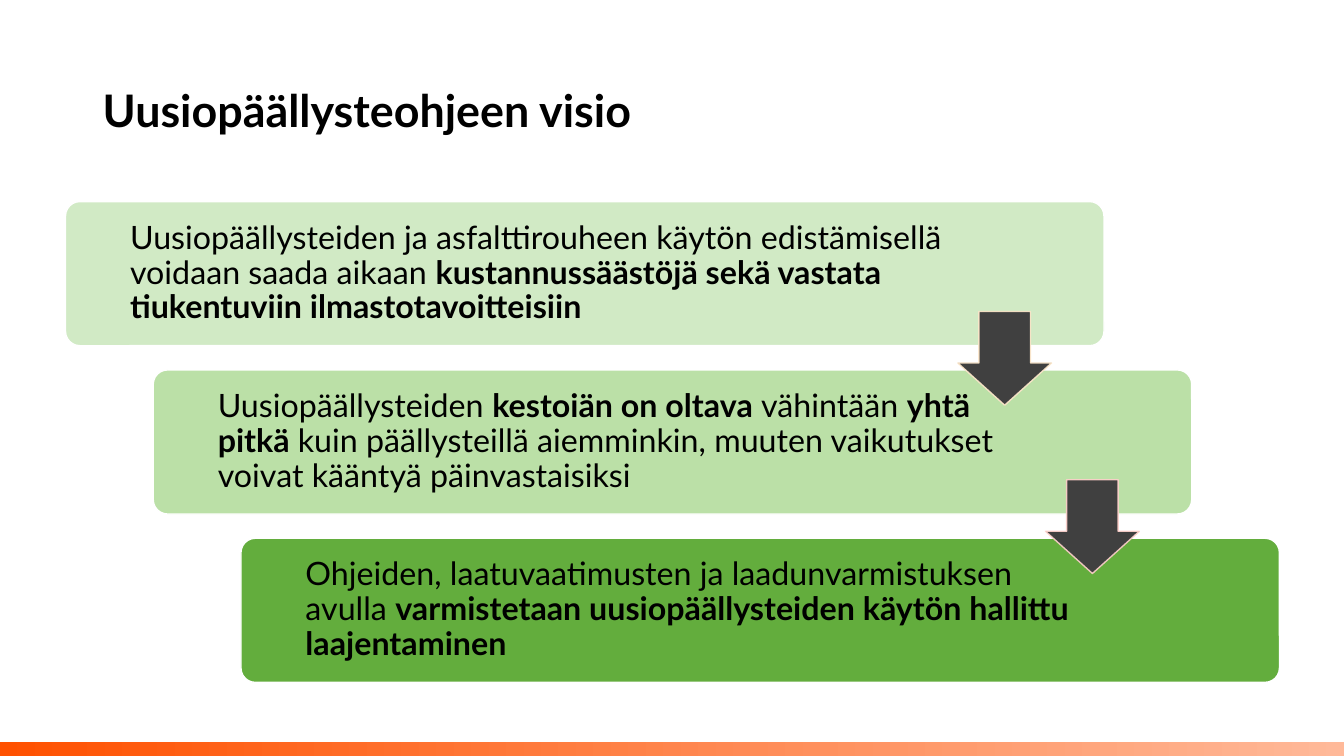
"""Build the slide on the vision of the recycled pavement guideline."""
from dataclasses import dataclass

import pptx
import pptx.dml.color
import pptx.enum.shapes
import pptx.enum.text
import pptx.oxml
import pptx.oxml.ns
import pptx.util

SHAPE = pptx.enum.shapes.MSO_SHAPE


@dataclass(frozen=True)
class Theme:
    font: str = "Lato"
    title_size: int = 32
    body_size: int = 23
    text: str = "000000"
    outline: str = "FFFFFF"
    arrow: str = "404040"
    bar: tuple[str, str] = ("FF5100", "FFB999")


@dataclass(frozen=True)
class Box:
    x: int
    y: int
    w: int
    h: int

    def shifted(self, n: int) -> "Box":
        return Box(self.x + n * STEP_X, self.y + n * STEP_Y, self.w, self.h)


@dataclass(frozen=True)
class Run:
    text: str
    bold: bool = False


@dataclass(frozen=True)
class Step:
    fill: str
    right_inset: int
    runs: tuple[Run, ...]


THEME = Theme()
STEP_X, STEP_Y = 87, 167
SLIDE = Box(0, 0, 1333, 750)
BAR = Box(0, 736, 1333, 14)
TITLE = Box(92, 40, 1077, 145)
FIRST_STEP = Box(65, 200, 1030, 143)
FIRST_ARROW = Box(950, 309, 93, 93)
INSET, INDENT = 10, 50

STEPS = (
    Step("D1EAC5", 155, (
        Run("Uusiopäällysteiden ja asfalttirouheen käytön edistämisellä voidaan saada aikaan "),
        Run("kustannussäästöjä sekä vastata tiukentuviin ilmastotavoitteisiin", True),
    )),
    Step("BBE0A7", 189, (
        Run("Uusiopäällysteiden "),
        Run("kestoiän on oltava ", True),
        Run("vähintään "),
        Run("yhtä pitkä ", True),
        Run("kuin päällysteillä aiemminkin, muuten vaikutukset voivat kääntyä päinvastaisiksi"),
    )),
    Step("63AD3D", 189, (
        Run("Ohjeiden, laatuvaatimusten ja laadunvarmistuksen avulla "),
        Run("varmistetaan uusiopäällysteiden käytön hallittu laajentaminen", True),
    )),
)
ARROW_OUTLINES = ("FFE9CC", "FFD1CC")


def px(n: int) -> pptx.util.Emu:
    """Turn px into EMU at 100 px to the inch."""
    return pptx.util.Emu(n * 9144)


def rgb(color: str) -> pptx.dml.color.RGBColor:
    """Turn a hex string into a colour."""
    return pptx.dml.color.RGBColor.from_string(color)


def place(box: Box) -> tuple[pptx.util.Emu, ...]:
    """Give the left, top, width and height of a box in EMU."""
    return px(box.x), px(box.y), px(box.w), px(box.h)


def apply(obj: object, values: dict[str, object]) -> None:
    """Set each named attribute of an object."""
    for name, value in values.items():
        setattr(obj, name, value)


def add_shape(s, kind, box: Box, adjustments: tuple[float, ...] = ()):
    """Add a preset shape without shadow."""
    sp = s.shapes.add_shape(kind, *place(box))
    sp.shadow.inherit = False
    for i, value in enumerate(adjustments):
        sp.adjustments[i] = value
    return sp


def paint(sp, fill: str, outline: str) -> None:
    """Give a shape a solid fill and a thin outline."""
    sp.fill.solid()
    sp.fill.fore_color.rgb = rgb(fill)
    sp.line.color.rgb = rgb(outline)
    sp.line.width = pptx.util.Pt(1)


def write(sp, runs: tuple[Run, ...], size: int):
    """Write one left-aligned paragraph, centred in height."""
    tf = sp.text_frame
    apply(tf, {"word_wrap": True, "vertical_anchor": pptx.enum.text.MSO_ANCHOR.MIDDLE})
    p = tf.paragraphs[0]
    apply(p, {"alignment": pptx.enum.text.PP_ALIGN.LEFT, "line_spacing": 0.9})
    for run in runs:
        r = p.add_run()
        r.text = run.text
        apply(r.font, {"name": THEME.font, "size": pptx.util.Pt(size), "bold": run.bold})
        r.font.color.rgb = rgb(THEME.text)
    return tf


def add_bar(s) -> None:
    """Draw the gradient bar along the bottom edge."""
    sp = add_shape(s, SHAPE.RECTANGLE, BAR)
    sp.line.fill.background()
    sp.fill.gradient()
    sp.fill.gradient_angle = 0
    for stop, color in zip(sp.fill.gradient_stops, THEME.bar):
        stop.color.rgb = rgb(color)


def add_step(s, step: Step, box: Box) -> None:
    """Draw one rounded step with its indented text."""
    sp = add_shape(s, SHAPE.ROUNDED_RECTANGLE, box, (0.1,))
    paint(sp, step.fill, THEME.outline)
    tf = write(sp, step.runs, THEME.body_size)
    apply(tf, {"margin_left": px(INSET), "margin_top": px(INSET),
               "margin_right": px(step.right_inset), "margin_bottom": px(INSET)})
    pPr = tf.paragraphs[0]._p.get_or_add_pPr()
    pPr.set("marL", str(px(INDENT)))
    pPr.set("indent", "0")


def add_arrow(s, outline: str, box: Box) -> None:
    """Draw a down arrow with a slightly transparent outline."""
    sp = add_shape(s, SHAPE.DOWN_ARROW, box, (0.55, 0.45))
    paint(sp, THEME.arrow, outline)
    clr = sp.line._ln.find(".//" + pptx.oxml.ns.qn("a:srgbClr"))
    alpha = f'<a:alpha {pptx.oxml.ns.nsdecls("a")} val="90000"/>'
    clr.append(pptx.oxml.parse_xml(alpha))


def main() -> None:
    """Build and save the slide."""
    prs = pptx.Presentation()
    apply(prs, {"slide_width": px(SLIDE.w), "slide_height": px(SLIDE.h)})
    s = prs.slides.add_slide(prs.slide_layouts[6])
    add_bar(s)
    title = s.shapes.add_textbox(*place(TITLE))
    write(title, (Run("Uusiopäällysteohjeen visio", True),), THEME.title_size)
    for n, step in enumerate(STEPS):
        add_step(s, step, FIRST_STEP.shifted(n))
    for n, outline in enumerate(ARROW_OUTLINES):
        add_arrow(s, outline, FIRST_ARROW.shifted(n))
    prs.save("out.pptx")


if __name__ == "__main__":
    main()
